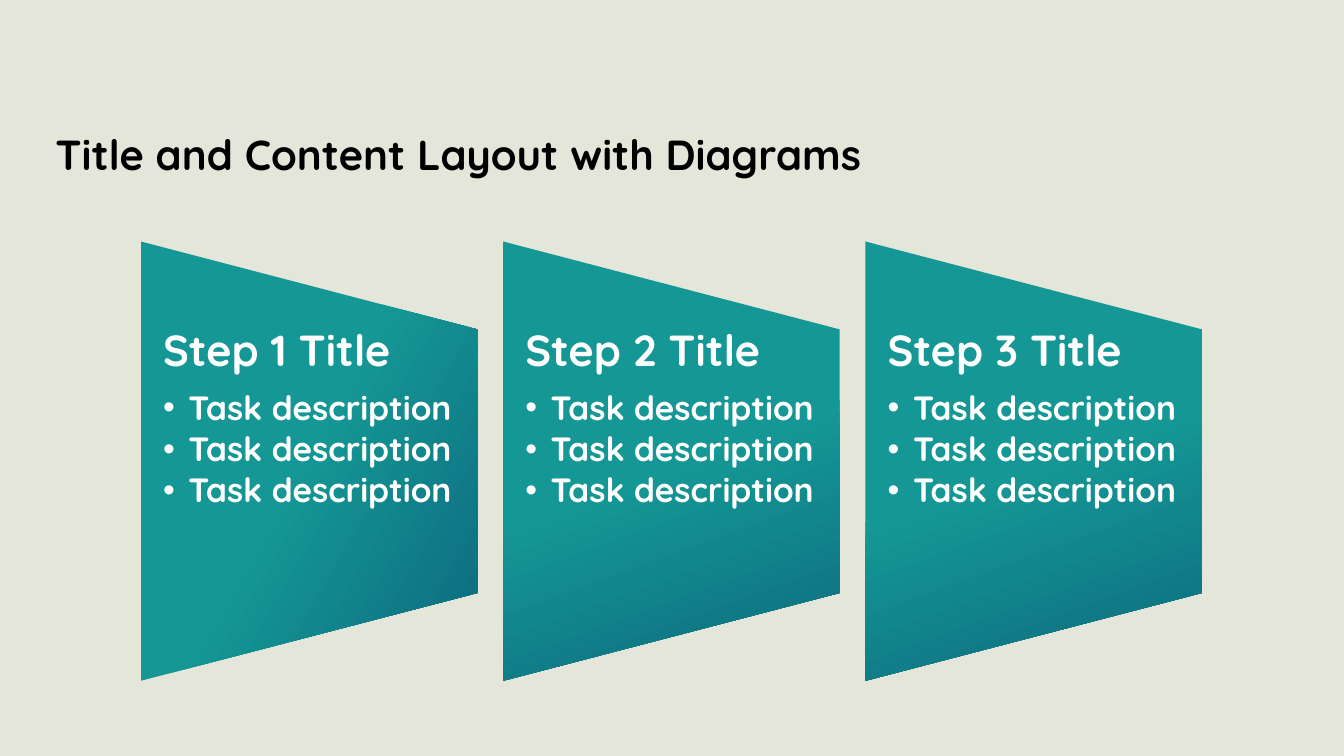
from lxml import etree
from pptx import Presentation
from pptx.dml.color import RGBColor
from pptx.enum import shapes, text
from pptx.oxml import ns
from pptx.util import Cm, Pt

FONT = "Quicksand"
BULLET_FONT = "Arial"
SAND = RGBColor(0xE5, 0xE6, 0xDA)
BLACK = RGBColor(0, 0, 0)
WHITE = RGBColor(0xFF, 0xFF, 0xFF)
TEAL = RGBColor(0x15, 0x98, 0x95)
DEEP_TEAL = RGBColor(0x0C, 0x69, 0x7E)

CARD_LEFT, CARD_PITCH = 3.55, 9.13
CARD_WIDTH, CARD_HEIGHT = 8.48, 11.07
CARD_MIDDLE = 11.62
TEXT_TOP, TEXT_HEIGHT = 8.29, 6.65

STEPS = [
    ("Step 1 Title", 30, (1, 47, 100)),
    ("Step 2 Title", 70, (0, 50, 100)),
    ("Step 3 Title", 70, (0, 50, 100)),
]
TASKS = ["Task description"] * 3


def add_span(para, words, size, color):
    span = para.add_run()
    span.text = words
    span.font.name = FONT
    span.font.size = Pt(size)
    span.font.bold = True
    span.font.color.rgb = color


def add_bullet(para):
    properties = para._p.get_or_add_pPr()
    properties.set("marL", str(Cm(0.64)))
    properties.set("indent", str(-Cm(0.64)))
    etree.SubElement(properties, ns.qn("a:buFont"), typeface=BULLET_FONT)
    etree.SubElement(properties, ns.qn("a:buChar"), char="•")


def fill_gradient(shape, angle, stops):
    shape.fill.gradient()
    gradient = shape._element.spPr.find(ns.qn("a:gradFill"))
    gradient.set("rotWithShape", "0")
    for child in list(gradient):
        gradient.remove(child)
    stop_list = etree.SubElement(gradient, ns.qn("a:gsLst"))
    for position, color in zip(stops, (TEAL, TEAL, DEEP_TEAL)):
        stop = etree.SubElement(stop_list, ns.qn("a:gs"), pos=str(position * 1000))
        etree.SubElement(stop, ns.qn("a:srgbClr"), val=str(color))
    etree.SubElement(gradient, ns.qn("a:lin"), ang=str(angle * 60000), scaled="0")


def set_title(page, words):
    title = page.shapes.title
    title.left, title.top = Cm(1.14), Cm(2.77)
    title.width, title.height = Cm(31.78), Cm(2.31)
    frame = title.text_frame
    frame.auto_size = text.MSO_AUTO_SIZE.NONE
    frame.vertical_anchor = text.MSO_ANCHOR.MIDDLE
    para = frame.paragraphs[0]
    para.alignment = text.PP_ALIGN.LEFT
    para.line_spacing = 0.95
    add_span(para, words, 30, BLACK)


def add_card(page, left, angle, stops):
    card = page.shapes.add_shape(
        shapes.MSO_SHAPE.FLOWCHART_MANUAL_OPERATION,
        Cm(left + (CARD_WIDTH - CARD_HEIGHT) / 2),
        Cm(CARD_MIDDLE - CARD_WIDTH / 2),
        Cm(CARD_HEIGHT),
        Cm(CARD_WIDTH),
    )
    card.rotation = 270
    card.shadow.inherit = False
    card.line.fill.background()
    fill_gradient(card, angle, stops)


def add_step_text(page, left, heading, tasks):
    box = page.shapes.add_textbox(
        Cm(left), Cm(TEXT_TOP), Cm(CARD_WIDTH), Cm(TEXT_HEIGHT)
    )
    frame = box.text_frame
    frame.word_wrap = True
    frame.margin_left = frame.margin_right = Cm(0.56)
    frame.margin_top = frame.margin_bottom = 0
    para = frame.paragraphs[0]
    para.line_spacing = 0.9
    para.space_after = Pt(11)
    add_span(para, heading, 31, WHITE)
    for task in tasks:
        para = frame.add_paragraph()
        para.level = 1
        add_bullet(para)
        para.line_spacing = 0.9
        para.space_after = Pt(3.6)
        add_span(para, task, 24, WHITE)


def main():
    deck = Presentation()
    deck.slide_width, deck.slide_height = Cm(33.87), Cm(19.05)
    page = deck.slides.add_slide(deck.slide_layouts.get_by_name("Title Only"))
    page.background.fill.solid()
    page.background.fill.fore_color.rgb = SAND
    set_title(page, "Title and Content Layout with Diagrams")
    for index, (heading, angle, stops) in enumerate(STEPS):
        left = CARD_LEFT + index * CARD_PITCH
        add_card(page, left, angle, stops)
        add_step_text(page, left, heading, TASKS)
    deck.save("out.pptx")


if __name__ == "__main__":
    main()
